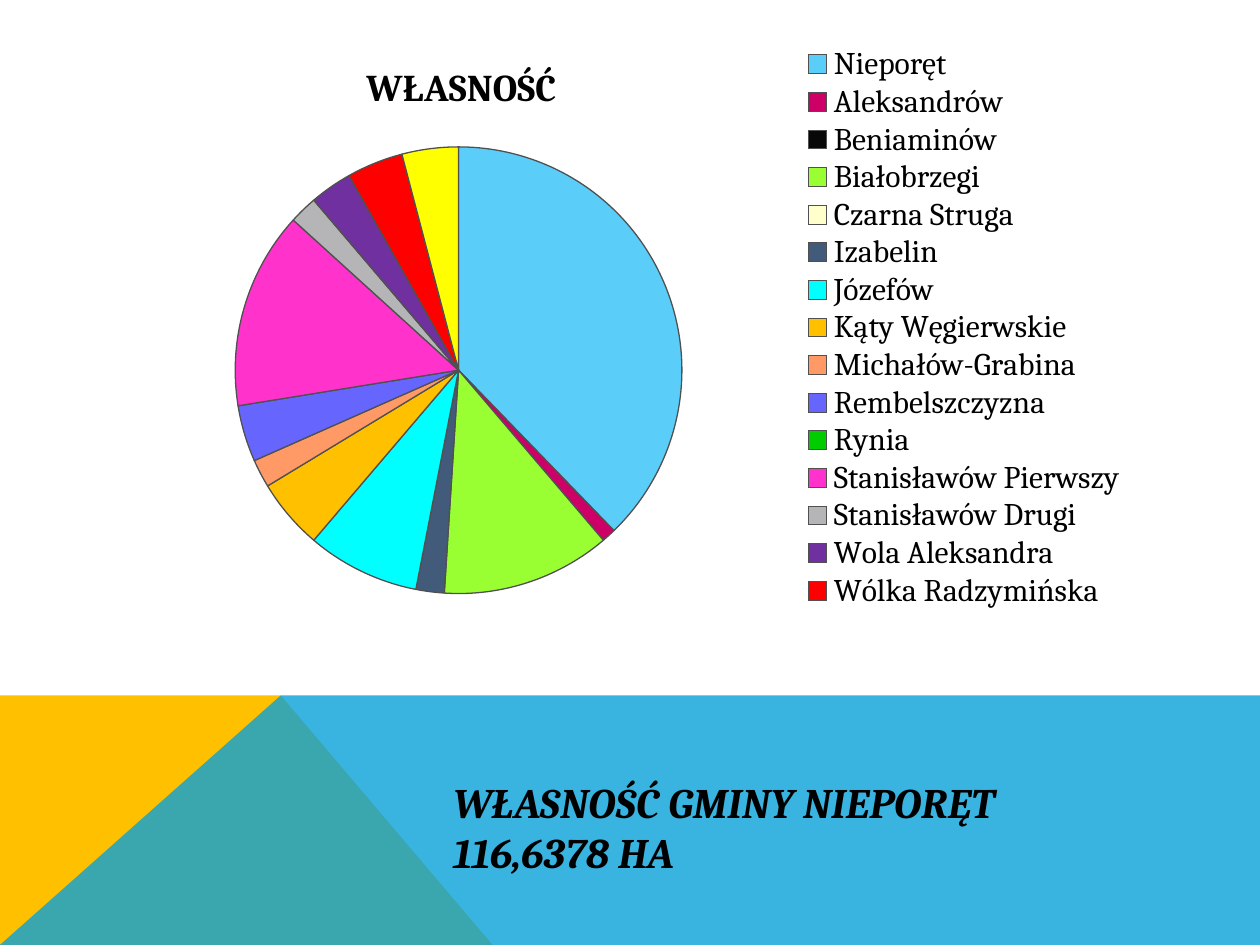
from lxml import etree
from pptx import Presentation
from pptx import util as u
from pptx.chart.data import CategoryChartData
from pptx.dml.color import RGBColor
from pptx.enum import chart as ch, text
from pptx.oxml import ns

SHARES = [
    ("Nieporęt", 37, "5ACEF9"),
    ("Aleksandrów", 1, "CC0066"),
    ("Beniaminów", 0, "080808"),
    ("Białobrzegi", 12, "99FF33"),
    ("Czarna Struga", 0, "FFFFCC"),
    ("Izabelin", 2, "425B7B"),
    ("Józefów", 8, "00FFFF"),
    ("Kąty Węgierwskie", 5, "FFC000"),
    ("Michałów-Grabina", 2, "FF9966"),
    ("Rembelszczyzna", 4, "6666FF"),
    ("Rynia", 0, "00CC00"),
    ("Stanisławów Pierwszy", 14, "FF33CC"),
    ("Stanisławów Drugi", 2, "B5B5B8"),
    ("Wola Aleksandra", 3, "7030A0"),
    ("Wólka Radzymińska", 4, "FF0000"),
    ("", 4, "FFFF00"),
]
BASE = {"name": "Cambria", "size": u.Pt(18), "bold": False}
HEAD = {**BASE, "size": u.Pt(21.6), "bold": True}
NOTE = {**BASE, "size": u.Pt(24), "bold": True, "italic": True}


def paint(fmt, hue):
    fmt.solid()
    fmt.fore_color.rgb = RGBColor.from_string(hue)


def style(font, look):
    for key, value in look.items():
        setattr(font, key, value)
    paint(font.fill, "000000")


def place(part, **spots):
    old = part.find(ns.qn("c:layout"))
    if old is None:
        old = etree.Element(ns.qn("c:layout"))
        tags = [ns.qn("c:tx"), ns.qn("c:legendPos")]
        prior = [kid for kid in part if kid.tag in tags]
        if prior:
            prior[-1].addnext(old)
        else:
            part.insert(0, old)
    for kid in list(old):
        old.remove(kid)
    man = etree.SubElement(old, ns.qn("c:manualLayout"))
    if "inner" in spots:
        etree.SubElement(man, ns.qn("c:layoutTarget")).set("val", "inner")
    for key in ("x", "y"):
        etree.SubElement(man, ns.qn(f"c:{key}Mode")).set("val", "edge")
    for key in ("x", "y", "w", "h"):
        if key in spots:
            etree.SubElement(man, ns.qn(f"c:{key}")).set("val", str(spots[key]))


def omit(key, index):
    entry = etree.Element(ns.qn("c:legendEntry"))
    etree.SubElement(entry, ns.qn("c:idx")).set("val", str(index))
    etree.SubElement(entry, ns.qn("c:delete")).set("val", "1")
    key.find(ns.qn("c:legendPos")).addnext(entry)


def patch(slide, dots, hue, alpha=100):
    pen = slide.shapes.build_freeform(*dots[0])
    pen.add_line_segments(dots[1:], close=True)
    shape = pen.convert_to_shape()
    shape.shadow.inherit = False
    shape.line.fill.background()
    paint(shape.fill, hue)
    if alpha < 100:
        tone = shape.fill._xPr.find(".//" + ns.qn("a:srgbClr"))
        etree.SubElement(tone, ns.qn("a:alpha")).set("val", str(alpha * 1000))


def band(slide, left, top, width, height):
    peak = left + u.Cm(5.66)
    foot = left + u.Cm(9.93)
    right, base = left + width, top + height
    patch(slide, [(left, base), (left, top), (peak, top), (foot, base)], "FFC000")
    patch(slide, [(left, base), (peak, top), (right, top), (right, base)], "08A1D9", 80)


def pie(slide, left, top, width, height):
    data = CategoryChartData()
    data.categories = [name for name, _, _ in SHARES]
    data.add_series("WŁASNOŚĆ", [share for _, share, _ in SHARES])
    chart = slide.shapes.add_chart(
        ch.XL_CHART_TYPE.PIE, left, top, width, height, data).chart
    style(chart.font, BASE)

    chart.has_title = True
    frame = chart.chart_title.text_frame
    frame.text = "WŁASNOŚĆ"
    style(frame.paragraphs[0].runs[0].font, HEAD)
    chart.chart_title.include_in_layout = False
    place(chart.chart_title._element, x=0.24, y=0.02)

    chart.has_legend = True
    key = chart.legend
    key.position = ch.XL_LEGEND_POSITION.RIGHT
    key.include_in_layout = False
    style(key.font, BASE)
    place(key._element, x=0.65, y=0, w=0.34, h=1)

    plot = chart.plots[0]
    plot.vary_by_categories = True
    place(chart._chartSpace.chart.plotArea, inner=True, x=0.12, y=0.18, w=0.43, h=0.79)
    for i, (name, _, hue) in enumerate(SHARES):
        fmt = plot.series[0].points[i].format
        paint(fmt.fill, hue)
        paint(fmt.line.fill, "505050")
        fmt.line.width = u.Pt(0.75)
        if not name:
            omit(key._element, i)


def note(slide, left, top, width, height):
    frame = slide.shapes.add_textbox(left, top, width, height).text_frame
    frame.word_wrap = True
    frame.auto_size = text.MSO_AUTO_SIZE.SHAPE_TO_FIT_TEXT
    frame.text = "WŁASNOŚĆ GMINY NIEPORĘT\n116,6378 HA"
    for para in frame.paragraphs:
        style(para.runs[0].font, NOTE)


def main():
    deck = Presentation()
    deck.slide_width, deck.slide_height = u.Cm(25.4), u.Cm(19.05)
    slide = deck.slides.add_slide(deck.slide_layouts[6])
    band(slide, 0, u.Cm(14.02), deck.slide_width, u.Cm(5.03))
    pie(slide, u.Cm(2.21), u.Cm(0.91), u.Cm(21), u.Cm(11.4))
    note(slide, u.Cm(8.89), u.Cm(15.52), u.Cm(14.4), u.Cm(2.31))
    deck.save("out.pptx")


if __name__ == "__main__":
    main()
